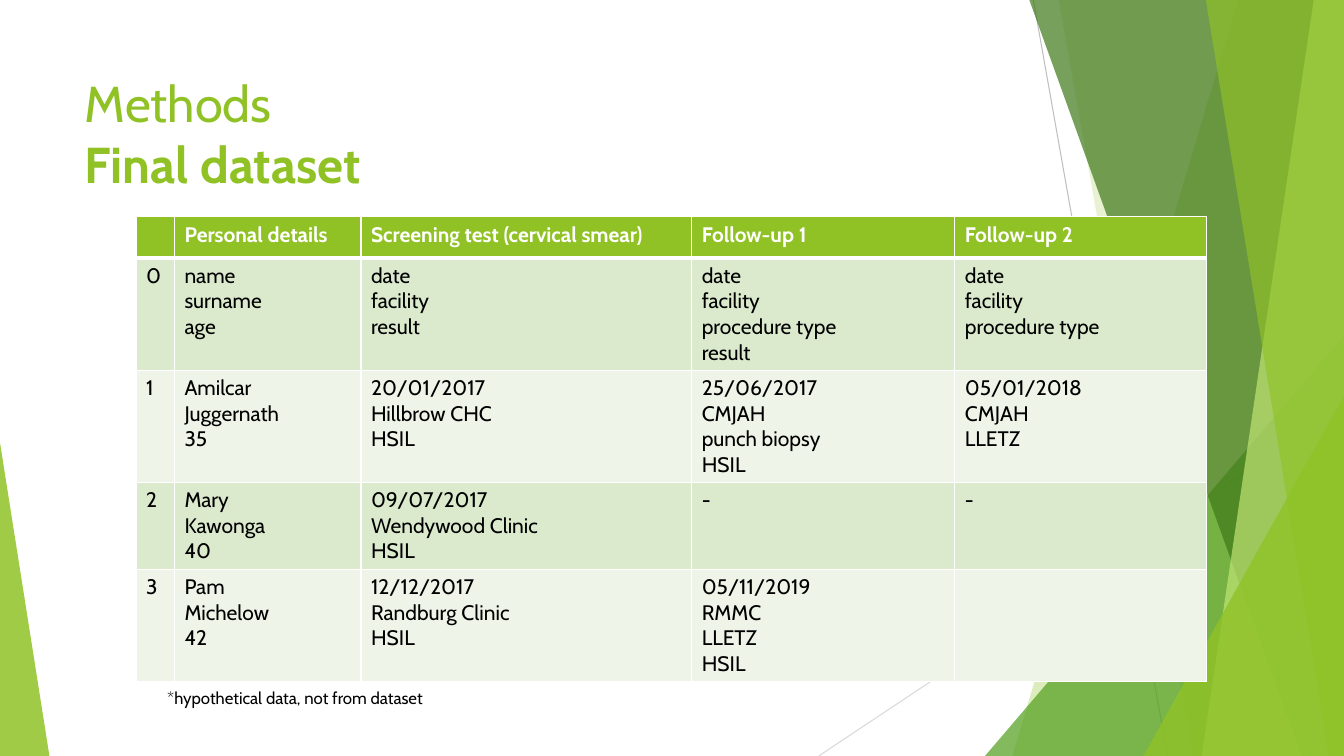
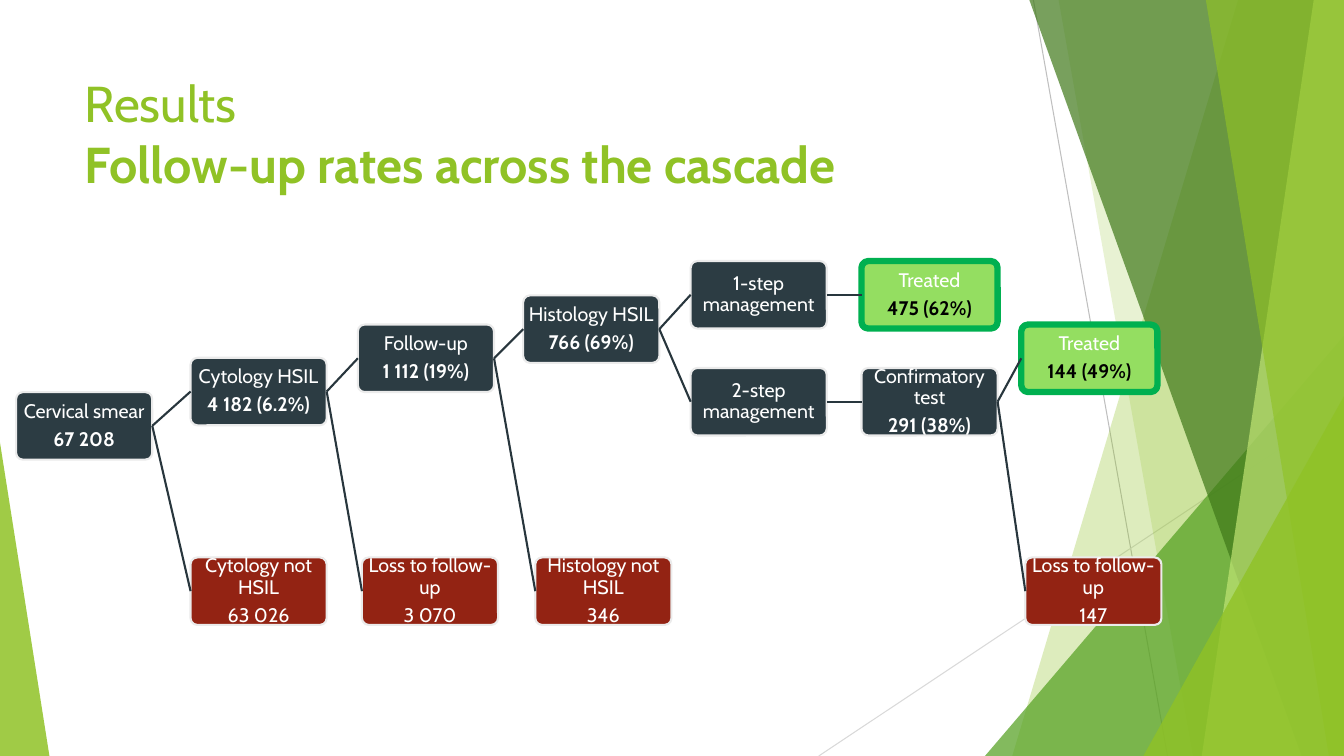
from lxml import etree
from pptx import Presentation
from pptx.dml.color import RGBColor
from pptx.enum.shapes import MSO_CONNECTOR, MSO_SHAPE
from pptx.enum.text import MSO_ANCHOR, MSO_AUTO_SIZE, PP_ALIGN
from pptx.oxml.ns import qn
from pptx.util import Inches, Pt

WIDTH, HEIGHT = Inches(13.33), Inches(7.5)
STRAIGHT = MSO_CONNECTOR.STRAIGHT
TRIANGLE, ROUNDED = MSO_SHAPE.ISOSCELES_TRIANGLE, MSO_SHAPE.ROUNDED_RECTANGLE
TOP, MIDDLE = MSO_ANCHOR.TOP, MSO_ANCHOR.MIDDLE
LEFT, CENTER = PP_ALIGN.LEFT, PP_ALIGN.CENTER
NO_FIT, GROW = MSO_AUTO_SIZE.NONE, MSO_AUTO_SIZE.SHAPE_TO_FIT_TEXT
LEFT_SITE, RIGHT_SITE = 1, 3
GREEN, WHITE, BLACK = "90C226", "FFFFFF", "000000"
color = RGBColor.from_string


def place(*shares):
    return [int(share * (HEIGHT if index % 2 else WIDTH) / 100)
            for index, share in enumerate(shares)]


def write(para, text, ink, **look):
    span = para.add_run()
    span.text = text
    span.font.color.rgb = color(ink)
    for name, value in {"name": "Cabin", **look}.items():
        setattr(span.font, name, value)


deck = Presentation()
deck.slide_width, deck.slide_height = WIDTH, HEIGHT
layout = deck.slide_layouts[5]

TITLES = [
    ("Methods", "Final dataset"),
    ("Results", "Follow-up rates across the cascade"),
]
pages = []
for topic, subject in TITLES:
    page = deck.slides.add_slide(layout)
    title = page.shapes.title
    title.left, title.top, title.width, title.height = place(5.55, 8.93, 70.52, 19.2)
    frame = title.text_frame
    for name, value in {"vertical_anchor": TOP, "auto_size": NO_FIT, "word_wrap": True}.items():
        setattr(frame, name, value)
    para = frame.paragraphs[0]
    para.alignment = LEFT
    write(para, topic, GREEN, size=Pt(36))
    para.add_line_break()
    write(para, subject, GREEN, size=Pt(36), bold=True)
    pages.append(page)
methods, results = pages

backdrop = methods.shapes.add_group_shape()
RAYS = [((76.89, 0, 86.87, 100), "BFBFBF"), ((100, 53.73, 60.92, 100), "D9D9D9")]
for ends, ink in RAYS:
    ray = backdrop.shapes.add_connector(STRAIGHT, *place(*ends))
    ray.line.color.rgb = color(ink)
    ray.line.width = Pt(0.75)
    etree.SubElement(ray.element.spPr, qn("a:effectLst"))

FACETS = [
    ((92.12, 75.32), GREEN, 30),
    ((78.77, 88.75), GREEN, 20),
    ((73.29, 44.4, 26.71, 1), "54A021", 72),
    ((76.59, 96.85), "3F7819", 70),
    ((97.75, 89.42), "C0E474", 70),
    ((89.72, 98.87), GREEN, 65),
    ((85.07, 52.4, 14.93, 1), GREEN, 80),
    ((0, 58.53, 3.68, 0), GREEN, 85),
]
for edges, ink, opacity in FACETS:
    if len(edges) == 2:
        upper, lower = edges
        outline = backdrop.shapes.build_freeform(*place(upper, 0), scale=1.0)
        corners = [(100, 0), (100, 100), (lower, 100)]
        outline.add_line_segments([place(*corner) for corner in corners], close=True)
        facet = outline.convert_to_shape()
    else:
        left, top, width, apex = edges
        facet = backdrop.shapes.add_shape(TRIANGLE, *place(left, top, width, 100 - top))
        facet.adjustments[0] = apex
    facet.shadow.inherit = False
    facet.line.fill.background()
    facet.fill.solid()
    facet.fill.fore_color.rgb = color(ink)
    tint = facet.element.spPr.find(qn("a:solidFill")).find(qn("a:srgbClr"))
    etree.SubElement(tint, qn("a:alpha"), val=str(opacity * 1000))

for number, node in enumerate(backdrop.element.iter(qn("p:cNvPr")), start=100):
    node.set("id", str(number))
layout.element.cSld.spTree.insert(2, backdrop.element)

COLUMNS = [2.85, 13.88, 24.61, 19.58, 18.75]
ROWS = [5.47, 14.8, 14.8, 11.47, 14.8]
RECORDS = [
    ["", "Personal details", "Screening test (cervical smear)", "Follow-up 1", "Follow-up 2"],
    ["0", "name\nsurname\nage", "date\nfacility\nresult",
     "date\nfacility\nprocedure type\nresult", "date\nfacility\nprocedure type"],
    ["1", "Amilcar\nJuggernath\n35", "20/01/2017\nHillbrow CHC\nHSIL",
     "25/06/2017\nCMJAH\npunch biopsy\nHSIL", "05/01/2018\nCMJAH\nLLETZ"],
    ["2", "Mary\nKawonga\n40", "09/07/2017\nWendywood Clinic\nHSIL", "-", "-"],
    ["3", "Pam\nMichelow\n42", "12/12/2017\nRandburg Clinic\nHSIL",
     "05/11/2019\nRMMC\nLLETZ\nHSIL", ""],
]
table = methods.shapes.add_table(
    len(ROWS), len(COLUMNS), *place(10.13, 28.67, sum(COLUMNS), sum(ROWS))).table
for column, share in zip(table.columns, COLUMNS):
    column.width = place(share)[0]
for index, (row, share, record) in enumerate(zip(table.rows, ROWS, RECORDS)):
    row.height = place(0, share)[1]
    header = index == 0
    shade = GREEN if header else ("EEF4E8", "DBE9CD")[index % 2]
    for cell, text in zip(row.cells, record):
        properties = cell._tc.get_or_add_tcPr()
        for side in ("lnL", "lnR", "lnT", "lnB"):
            thick = (index, side) in [(0, "lnB"), (1, "lnT")]
            border = etree.SubElement(properties, qn("a:" + side), w=str(Pt(3 if thick else 1)))
            paint = etree.SubElement(border, qn("a:solidFill"))
            etree.SubElement(paint, qn("a:srgbClr"), val=WHITE)
        cell.fill.solid()
        cell.fill.fore_color.rgb = color(shade)
        for position, line in enumerate(text.split("\n") if text else []):
            frame = cell.text_frame
            para = frame.add_paragraph() if position else frame.paragraphs[0]
            write(para, line, WHITE if header else BLACK, size=Pt(15), bold=header)

note = methods.shapes.add_textbox(*place(11.7, 90.27, 22.28, 4)).text_frame
note.word_wrap, note.auto_size = False, GROW
write(note.paragraphs[0], "*hypothetical data, not from dataset", BLACK, size=Pt(12))

STYLES = {
    "stage": ("2C3C43", "EBEBEB", 1.5, WHITE, True),
    "treated": ("94DE61", "00B050", 4.5, BLACK, True),
    "lost": ("932313", "EBEBEB", 1.5, WHITE, False),
}
LOST_ROW = 73.73
STEPS = {
    "smear": (1.2, 51.87, "stage", "Cervical smear", "67 208"),
    "cytology": (14.18, 47.33, "stage", "Cytology HSIL", "4 182 (6.2%)"),
    "follow": (26.63, 42.93, "stage", "Follow-up", "1 112 (19%)"),
    "histology": (38.93, 39.07, "stage", "Histology HSIL", "766 (69%)"),
    "one step": (51.39, 34.53, "stage", "1-step management"),
    "one treated": (64.1, 34.53, "treated", "Treated", "475 (62%)"),
    "two step": (51.39, 48.67, "stage", "2-step management"),
    "confirm": (64.1, 48.67, "stage", "Confirmatory test", "291 (38%)"),
    "two treated": (75.99, 42.93, "treated", "Treated", "144 (49%)"),
    "confirm lost": (76.29, LOST_ROW, "lost", "Loss to follow-up", "147"),
    "not histology": (39.83, LOST_ROW, "lost", "Histology not HSIL", "346"),
    "cytology lost": (26.93, LOST_ROW, "lost", "Loss to follow-up", "3 070"),
    "not cytology": (14.18, LOST_ROW, "lost", "Cytology not HSIL", "63 026"),
}
boxes = {}
for step, (left, top, style, *lines) in STEPS.items():
    fill, edge, weight, ink, strong = STYLES[style]
    box = results.shapes.add_shape(ROUNDED, *place(left, top, 10.13, 8.93))
    box.adjustments[0] = 0.1
    box.shadow.inherit = False
    box.fill.solid()
    box.fill.fore_color.rgb = color(fill)
    box.line.color.rgb = color(edge)
    box.line.width = Pt(weight)
    frame = box.text_frame
    margins = {"margin_" + side: Inches(0.01) for side in ("left", "top", "right", "bottom")}
    for name, value in {"word_wrap": True, "vertical_anchor": MIDDLE, **margins}.items():
        setattr(frame, name, value)
    for position, line in enumerate(lines):
        para = frame.add_paragraph() if position else frame.paragraphs[0]
        for name, value in {"alignment": CENTER, "line_spacing": 0.9, "space_after": Pt(4.9)}.items():
            setattr(para, name, value)
        write(para, line, ink if position else WHITE, size=Pt(14), bold=strong and position > 0)
    boxes[step] = box

BRANCHES = {
    "smear": ["cytology", "not cytology"],
    "cytology": ["follow", "cytology lost"],
    "follow": ["histology", "not histology"],
    "histology": ["one step", "two step"],
    "one step": ["one treated"],
    "two step": ["confirm"],
    "confirm": ["two treated", "confirm lost"],
}
for source, targets in BRANCHES.items():
    for target in targets:
        branch = results.shapes.add_connector(STRAIGHT, 0, 0, 0, 0)
        branch.begin_connect(boxes[source], RIGHT_SITE)
        branch.end_connect(boxes[target], LEFT_SITE)
        branch.line.color.rgb = color("28363D")
        branch.line.width = Pt(1.5)
        etree.SubElement(branch.element.spPr, qn("a:effectLst"))

deck.save("out.pptx")
